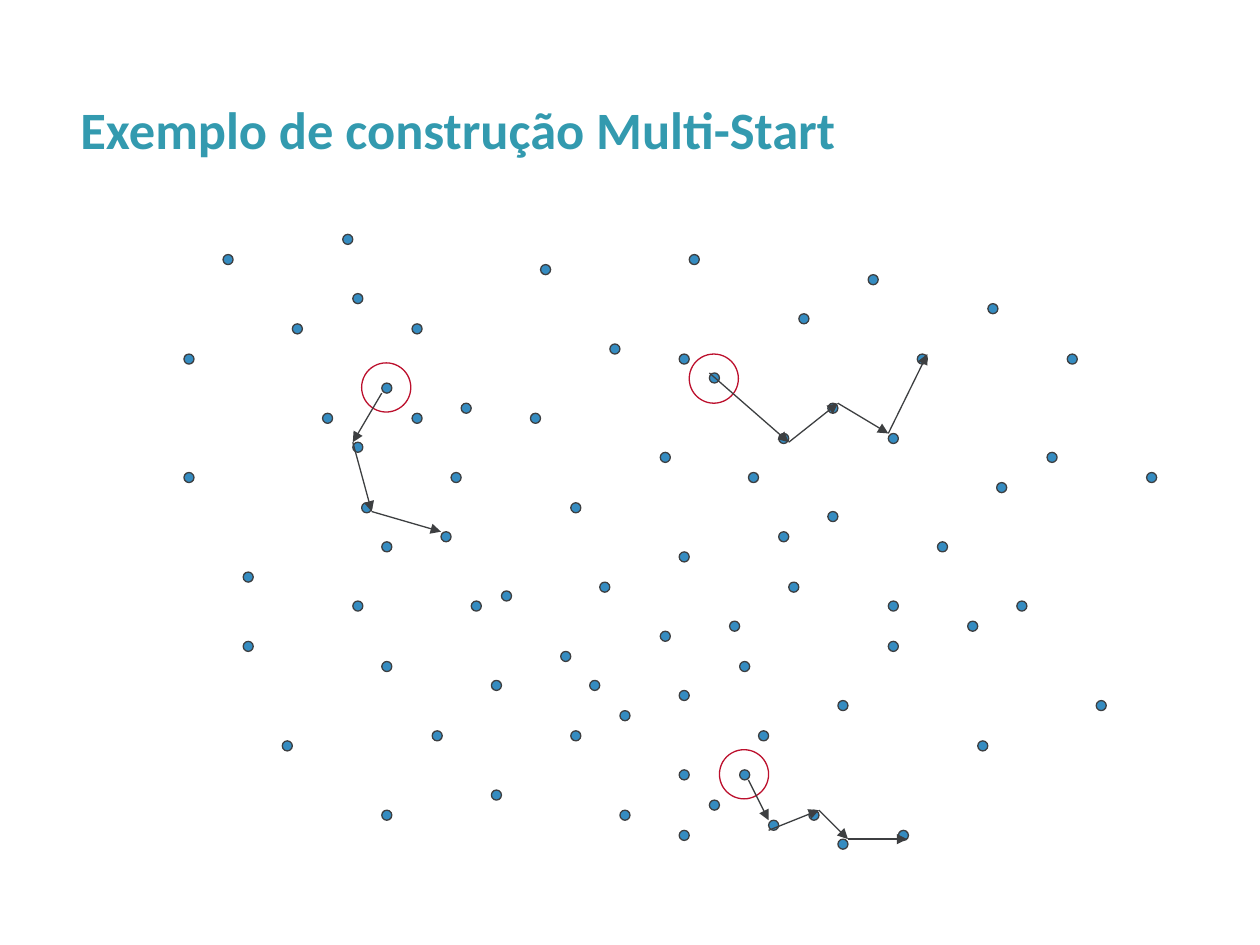
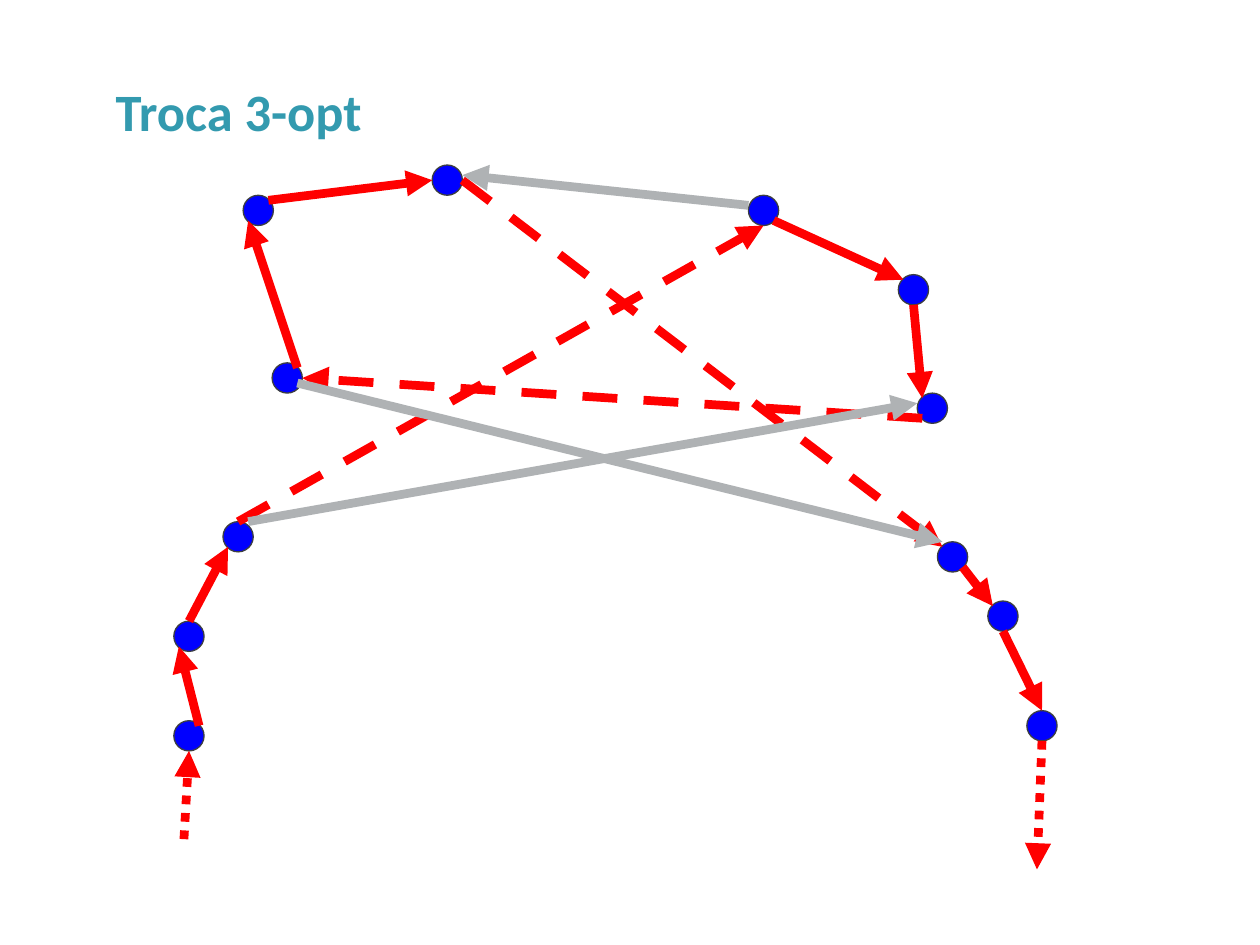
"""Builds two slides on route heuristics: multi-start construction and the 3-opt move."""
from itertools import pairwise
from math import sqrt

from lxml import etree
from pptx import Presentation
from pptx import util as u
from pptx.dml import color
from pptx.enum import dml, shapes, text
from pptx.oxml import ns

PX = 9144
FONT = "Calibri"
TEAL, BLUE, PURE_BLUE = "339AAF", "358CC1", "0000FF"
INK, CRIMSON, RED, GREY = "3D3F41", "BC102D", "FF0000", "AFB2B4"
DASH, DOTS = dml.MSO_LINE.DASH, dml.MSO_LINE.ROUND_DOT

CITY_SIZE, RING_SIZE, NODE_SIZE = 8, 39, 24
CITY_TOPS_BY_LEFT = {
    146: [281, 375], 177: [202], 193: [454, 509], 224: [588], 232: [257],
    256: [328], 272: [186], 280: [233, 351, 477], 287: [399],
    303: [304, 430, 525, 643], 327: [257, 328], 343: [580], 350: [422],
    358: [375], 366: [320], 374: [477], 390: [540, 627], 398: [469],
    421: [328], 429: [210], 445: [517], 453: [399, 580], 468: [540],
    476: [462], 484: [273], 492: [564, 643], 524: [359, 501],
    539: [281, 438, 548, 611, 659], 547: [202], 563: [296, 635], 579: [493],
    587: [525, 611], 594: [375], 602: [580], 610: [651], 618: [344, 422],
    626: [462], 634: [249], 642: [643], 657: [320, 406], 665: [556, 666],
    689: [218], 705: [344, 477, 509], 713: [659], 728: [281], 744: [430],
    768: [493], 776: [588], 784: [241], 791: [383], 807: [477], 831: [359],
    847: [281], 870: [556], 910: [375],
}
START_RINGS = [(287, 288), (547, 281), (571, 595)]
PARTIAL_ROUTES = [
    [(303, 312), (280, 351), (295, 406), (350, 422)],
    [(563, 296), (626, 351), (665, 320), (705, 344), (736, 281)],
    [(594, 619), (610, 651)],
    [(610, 659), (650, 643), (673, 666), (720, 666)],
]

NODES = {
    "A": (138, 572), "B": (138, 493), "C": (177, 414), "D": (216, 288),
    "E": (193, 155), "F": (343, 131), "G": (594, 155), "H": (713, 218),
    "I": (728, 312), "J": (744, 430), "K": (784, 477), "L": (815, 564),
}
KEPT_EDGES = ["A ne B sw", "B n C sw", "J se K nw", "K s L n",
              "E ne F w", "D ne E sw", "G se H nw", "H s I nw"]
REMOVED_EDGES = ["C n G s", "F e J nw", "I sw D e"]
ADDED_EDGES = ["C ne I w", "G w F e", "D se J nw"]
ADDED_LIFT = 4
ROUTE_ENTRY, ROUTE_EXIT = (146, 666), (823, 690)


def rgb(code):
    """Turn a hex string into a colour."""
    return color.RGBColor.from_string(code)


def write(frame, words, size=30, ink=TEAL, bold=True, spacing=0.9):
    """Write one formatted paragraph into a text frame."""
    para = frame.paragraphs[0]
    para.line_spacing = spacing
    span = para.add_run()
    span.text = words
    span.font.name, span.font.size, span.font.bold = FONT, u.Pt(size), bold
    span.font.color.rgb = rgb(ink)


def rim(name, side):
    """Return the point of a node's rim that faces a compass side."""
    left, top = NODES[name]
    across = ("e" in side) - ("w" in side)
    down = ("s" in side) - ("n" in side)
    reach = NODE_SIZE / 2 / sqrt(len(side))
    middle = NODE_SIZE / 2
    return round(left + middle + across * reach), round(top + middle + down * reach)


class Slides:
    """Hold the deck, its style and the current slide."""

    def __init__(self):
        """Start an empty deck."""
        self.deck = Presentation()
        self.deck.slide_width, self.deck.slide_height = 1000 * PX, 750 * PX
        self.page = None

    def new_page(self):
        """Add a blank slide and make it current."""
        self.page = self.deck.slides.add_slide(self.deck.slide_layouts[6])

    def title(self, words, left, top, width, height, anchor):
        """Add a slide title."""
        box = self.page.shapes.add_textbox(left * PX, top * PX, width * PX, height * PX)
        box.text_frame.word_wrap = True
        box.text_frame.vertical_anchor = anchor
        write(box.text_frame, words)

    def circle(self, left, top, size, fill=None, line=INK):
        """Add a circle, hollow when no fill is given."""
        disc = self.page.shapes.add_shape(
            shapes.MSO_SHAPE.OVAL, left * PX, top * PX, size * PX, size * PX)
        disc.shadow.inherit = False
        if fill:
            disc.fill.solid()
            disc.fill.fore_color.rgb = rgb(fill)
        else:
            disc.fill.background()
        disc.line.color.rgb = rgb(line)
        disc.line.width = u.Pt(0.75)

    def arrow(self, start, end, ink=INK, width=0.75, dash=None):
        """Add a straight arrow between two points."""
        ends = [length * PX for length in (*start, *end)]
        link = self.page.shapes.add_connector(shapes.MSO_CONNECTOR.STRAIGHT, *ends)
        link.line.color.rgb = rgb(ink)
        link.line.width = u.Pt(width)
        if dash:
            link.line.dash_style = dash
        outline = link.line._get_or_add_ln()
        etree.SubElement(outline, ns.qn("a:tailEnd"), type="triangle")
        etree.SubElement(link._element.spPr, ns.qn("a:effectLst"))

    def edges(self, routes, ink=RED, dash=None, lift=0):
        """Add thick arrows between nodes, raised by a lift."""
        for route in routes:
            source, leave, target, enter = route.split()
            (x1, y1), (x2, y2) = rim(source, leave), rim(target, enter)
            self.arrow((x1, y1 - lift), (x2, y2 - lift), ink, 5, dash)


def multi_start(slides):
    """Build the multi-start slide."""
    slides.new_page()
    for left, tops in CITY_TOPS_BY_LEFT.items():
        for top in tops:
            slides.circle(left, top, CITY_SIZE, BLUE)
    for left, top in START_RINGS:
        slides.circle(left, top, RING_SIZE, line=CRIMSON)
    for route in PARTIAL_ROUTES:
        for start, end in pairwise(route):
            slides.arrow(start, end)
    slides.title("Exemplo de construção Multi-Start", 54, 67, 933, 66,
                 text.MSO_ANCHOR.BOTTOM)


def three_opt(slides):
    """Build the 3-opt slide."""
    slides.new_page()
    slides.title("Troca 3-opt", 82, 28, 850, 125, text.MSO_ANCHOR.MIDDLE)
    for left, top in NODES.values():
        slides.circle(left, top, NODE_SIZE, PURE_BLUE)
    slides.arrow(ROUTE_ENTRY, rim("A", "s"), RED, 5, DOTS)
    slides.arrow(rim("L", "s"), ROUTE_EXIT, RED, 5, DOTS)
    slides.edges(REMOVED_EDGES, dash=DASH)
    slides.edges(KEPT_EDGES)
    slides.edges(ADDED_EDGES, GREY, lift=ADDED_LIFT)


def main():
    """Build and save the deck."""
    slides = Slides()
    multi_start(slides)
    three_opt(slides)
    slides.deck.save("out.pptx")


if __name__ == "__main__":
    main()
